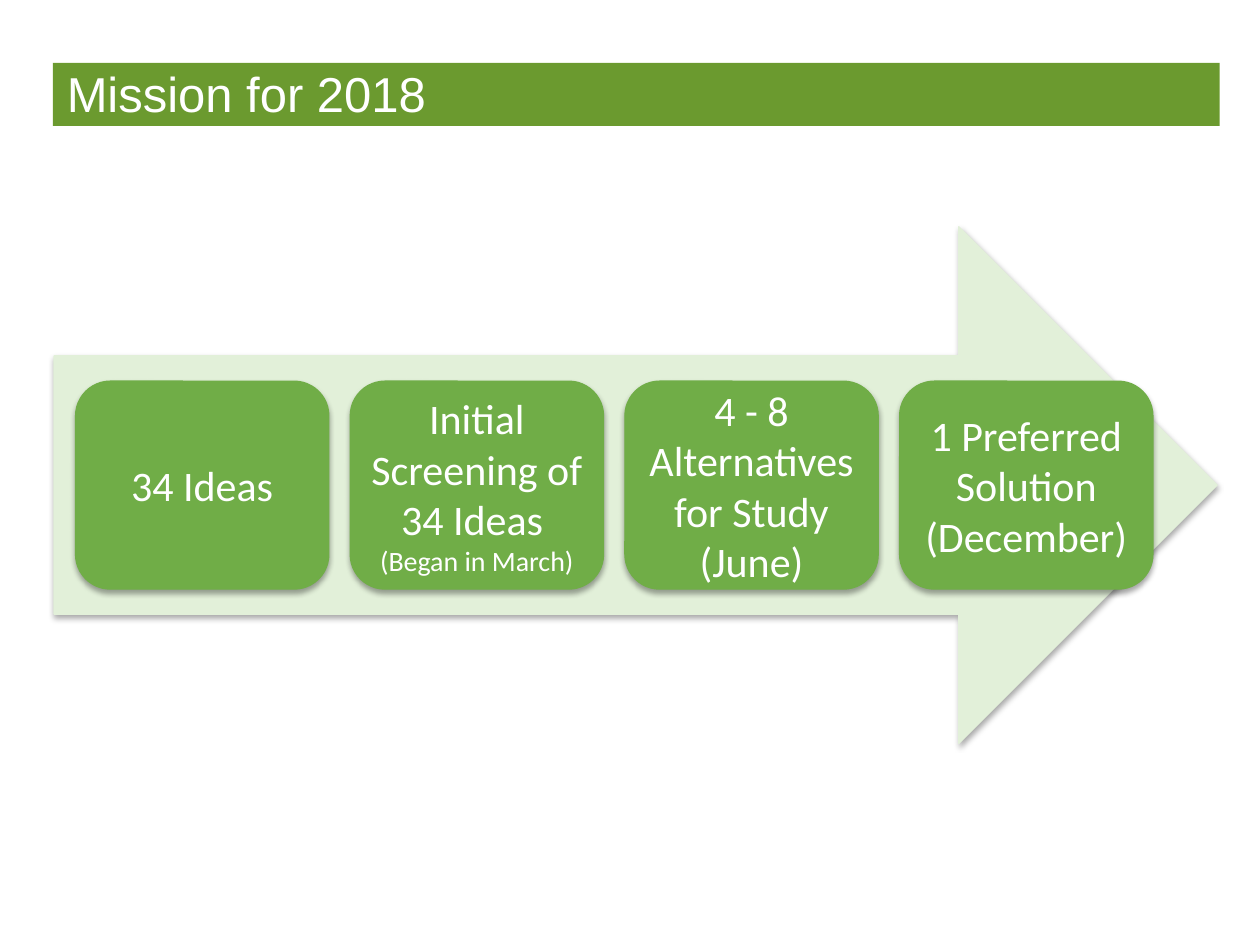
from lxml import etree
from pptx import Presentation, util as u
from pptx.dml.color import RGBColor
from pptx.enum import shapes, text
from pptx.oxml.ns import qn

TITLE = "Mission for 2018"
STEPS = [
    [("34 Ideas", 24)],
    [("Initial Screening of 34 Ideas ", 24), ("(Began in March)", 16)],
    [("4 - 8 Alternatives for Study (June)", 24)],
    [("1 Preferred Solution (December)", 24)],
]
COLORS = {"bar": "6B9A2F", "arrow": "E2F0D9", "step": "70AD47",
          "text": "FFFFFF", "shade": "000000"}
WIDE, HIGH = 10, 7.5
BAR = (0.42, 0.5, 9.26, 0.5)
HEAD = (0.43, 0.51, 7.9, 0.45)
ARROW = (0.43, 1.8, 9.23, 4.1)
LEFT, STEP_W, STEP_H, GAP = 0.6, 2.01, 1.65, 0.17
FRAME = {"word_wrap": True, "auto_size": text.MSO_AUTO_SIZE.NONE,
         "vertical_anchor": text.MSO_ANCHOR.MIDDLE}
SHADE = {"blurRad": u.Pt(3.1), "dist": u.Pt(1.8), "dir": 90 * 60000,
         "algn": "ctr", "rotWithShape": 0}


def paint(name):
    return RGBColor.from_string(COLORS[name])


def assign(item, values):
    for key, value in values.items():
        setattr(item, key, value)


def write(shape, lines, face, align):
    frame = shape.text_frame
    assign(frame, FRAME)
    for i, (words, size) in enumerate(lines):
        para = frame.paragraphs[0] if i == 0 else frame.add_paragraph()
        para.alignment = align
        run = para.add_run()
        run.text = words
        assign(run.font, {"name": face, "size": u.Pt(size)})
        run.font.color.rgb = paint("text")


def shade(shape):
    effects = shape._element.spPr.find(qn("a:effectLst"))
    outer = etree.SubElement(effects, qn("a:outerShdw"),
                             {key: str(value) for key, value in SHADE.items()})
    color = etree.SubElement(outer, qn("a:srgbClr"), val=COLORS["shade"])
    etree.SubElement(color, qn("a:alpha"), val="35000")


def draw(slide, kind, box, color, raised=True):
    shape = slide.shapes.add_shape(kind, *map(u.Inches, box))
    shape.fill.solid()
    shape.fill.fore_color.rgb = paint(color)
    shape.shadow.inherit = False
    if raised:
        shape.line.color.rgb = paint(color)
        shape.line.width = u.Pt(0.75)
        shade(shape)
    else:
        shape.line.fill.background()
    return shape


def main():
    deck = Presentation()
    deck.slide_width, deck.slide_height = u.Inches(WIDE), u.Inches(HIGH)
    slide = deck.slides.add_slide(deck.slide_layouts[5])
    kinds = shapes.MSO_SHAPE

    bar = draw(slide, kinds.RECTANGLE, BAR, "bar", raised=False)
    title = slide.shapes.title
    title._element.addprevious(bar._element)
    assign(title, dict(zip(("left", "top", "width", "height"), map(u.Inches, HEAD))))
    write(title, [(TITLE, 28)], "Arial", text.PP_ALIGN.LEFT)

    draw(slide, kinds.RIGHT_ARROW, ARROW, "arrow")
    top = ARROW[1] + (ARROW[3] - STEP_H) / 2
    for i, lines in enumerate(STEPS):
        box = (LEFT + i * (STEP_W + GAP), top, STEP_W, STEP_H)
        step = draw(slide, kinds.ROUNDED_RECTANGLE, box, "step")
        assign(step.text_frame, {"margin_left": u.Inches(0.07),
                                 "margin_right": u.Inches(0.07)})
        write(step, lines, "Calibri", text.PP_ALIGN.CENTER)

    deck.save("out.pptx")


if __name__ == "__main__":
    main()
